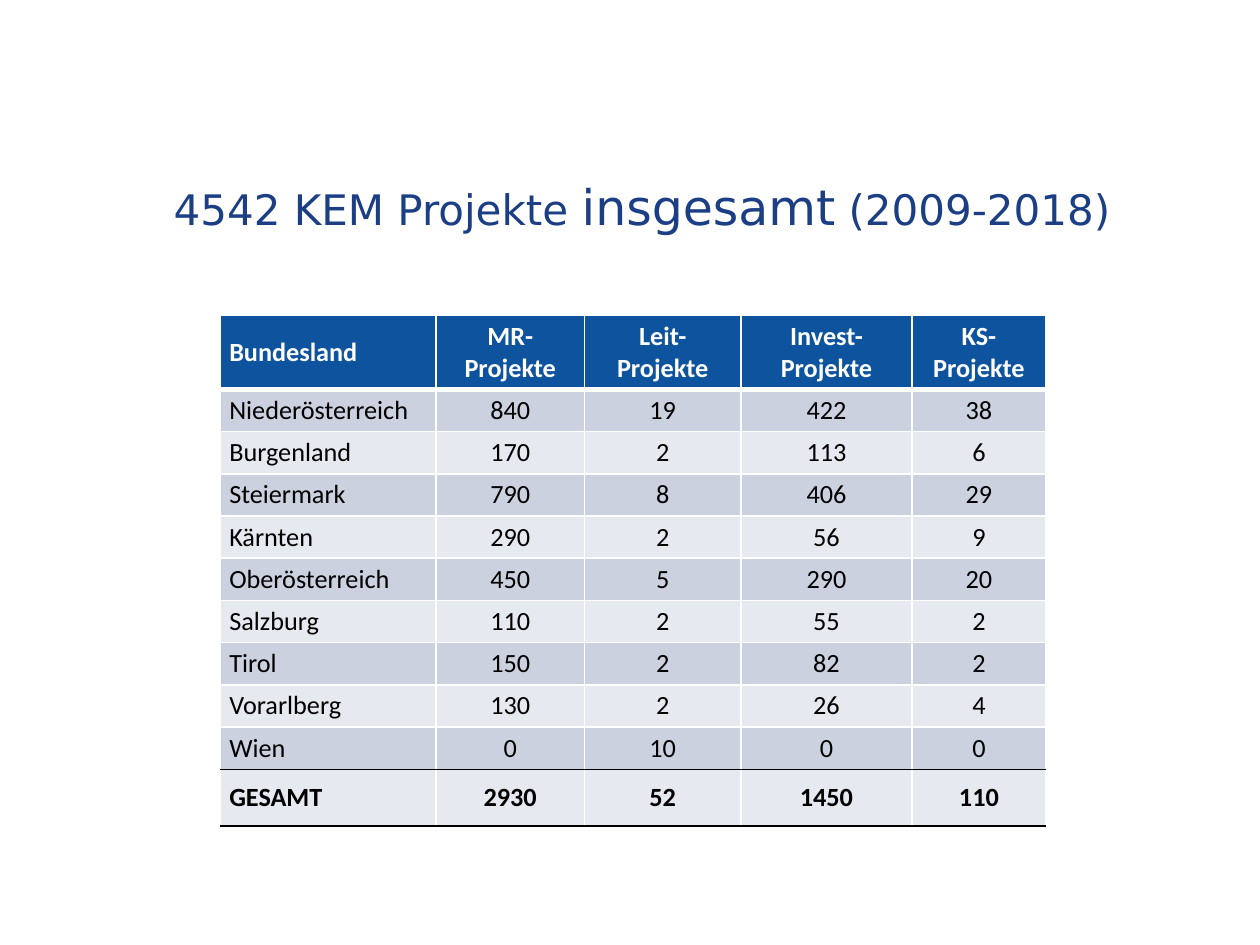
"""Build a slide with a table of KEM projects by Austrian state."""
from lxml import etree
from pptx import Presentation, util as u
from pptx.dml.color import RGBColor
from pptx.enum import text
from pptx.oxml import ns

NAVY = RGBColor(0x1B, 0x3E, 0x84)
BLUE = RGBColor(0x0D, 0x53, 0x9E)
BAND_DARK = RGBColor(0xCC, 0xD1, 0xDF)
BAND_LIGHT = RGBColor(0xE7, 0xE9, 0xF0)
WHITE = RGBColor(0xFF, 0xFF, 0xFF)
BLACK = RGBColor(0, 0, 0)

TITLE_RUNS = [("4542 KEM Projekte ", 24), ("insgesamt", 28), (" (2009-2018)", 24)]
ROWS = [
    ("Bundesland", "MR-Projekte", "Leit-Projekte", "Invest-Projekte", "KS-Projekte"),
    ("Niederösterreich", 840, 19, 422, 38),
    ("Burgenland", 170, 2, 113, 6),
    ("Steiermark", 790, 8, 406, 29),
    ("Kärnten", 290, 2, 56, 9),
    ("Oberösterreich", 450, 5, 290, 20),
    ("Salzburg", 110, 2, 55, 2),
    ("Tirol", 150, 2, 82, 2),
    ("Vorarlberg", 130, 2, 26, 4),
    ("Wien", 0, 10, 0, 0),
    ("GESAMT", 2930, 52, 1450, 110),
]
COLUMN_WIDTHS = [1.71, 1.18, 1.24, 1.36, 1.06]
TOTAL = len(ROWS) - 1
ROW_HEIGHTS = [0.57] + [0.33] * (TOTAL - 1) + [0.45]


def add_border(cell, side, color, points):
    properties = cell._tc.get_or_add_tcPr()
    line = etree.SubElement(properties, ns.qn(f"a:ln{side}"), w=str(u.Pt(points)))
    fill = etree.SubElement(line, ns.qn("a:solidFill"))
    etree.SubElement(fill, ns.qn("a:srgbClr"), val=str(color))


deck = Presentation()
deck.slide_width, deck.slide_height = u.Inches(10), u.Inches(7.5)
page = deck.slides.add_slide(deck.slide_layouts[6])

frame = page.shapes.add_table(
    len(ROWS), len(COLUMN_WIDTHS), u.Inches(1.75), u.Inches(2.5),
    u.Inches(sum(COLUMN_WIDTHS)), u.Inches(sum(ROW_HEIGHTS)))
table = frame.table
for column, width in zip(table.columns, COLUMN_WIDTHS):
    column.width = u.Inches(width)
for row, height in zip(table.rows, ROW_HEIGHTS):
    row.height = u.Inches(height)

for r, values in enumerate(ROWS):
    is_header, is_total = r == 0, r == TOTAL
    top = BLACK if is_total else WHITE
    bottom = BLACK if r >= TOTAL - 1 else WHITE
    band = BLUE if is_header else BAND_DARK if r % 2 else BAND_LIGHT
    for c, value in enumerate(values):
        cell = table.cell(r, c)
        cell.margin_left = cell.margin_right = u.Inches(0.07)
        cell.margin_top = cell.margin_bottom = u.Inches(0.04)
        cell.vertical_anchor = text.MSO_ANCHOR.MIDDLE
        add_border(cell, "L", WHITE, 1)
        add_border(cell, "R", WHITE, 1)
        add_border(cell, "T", top, 3 if r == 1 else 1)
        add_border(cell, "B", bottom, 3 if is_header else 1)
        cell.fill.solid()
        cell.fill.fore_color.rgb = band
        cell.text_frame.text = str(value)
        para = cell.text_frame.paragraphs[0]
        para.alignment = text.PP_ALIGN.CENTER if c else text.PP_ALIGN.LEFT
        font = para.runs[0].font
        font.name, font.size = "Calibri", u.Pt(15)
        font.bold = is_header or is_total
        font.color.rgb = WHITE if is_header else BLACK

title = page.shapes.add_textbox(
    u.Inches(1.28), u.Inches(1.03), u.Inches(7.89), u.Inches(1.21))
title.text_frame.word_wrap = True
title.text_frame.vertical_anchor = text.MSO_ANCHOR.MIDDLE
para = title.text_frame.paragraphs[0]
for words, size in TITLE_RUNS:
    span = para.add_run()
    span.text = words
    span.font.name, span.font.size = "DejaVu Sans", u.Pt(size)
    span.font.color.rgb = NAVY

deck.save("out.pptx")
